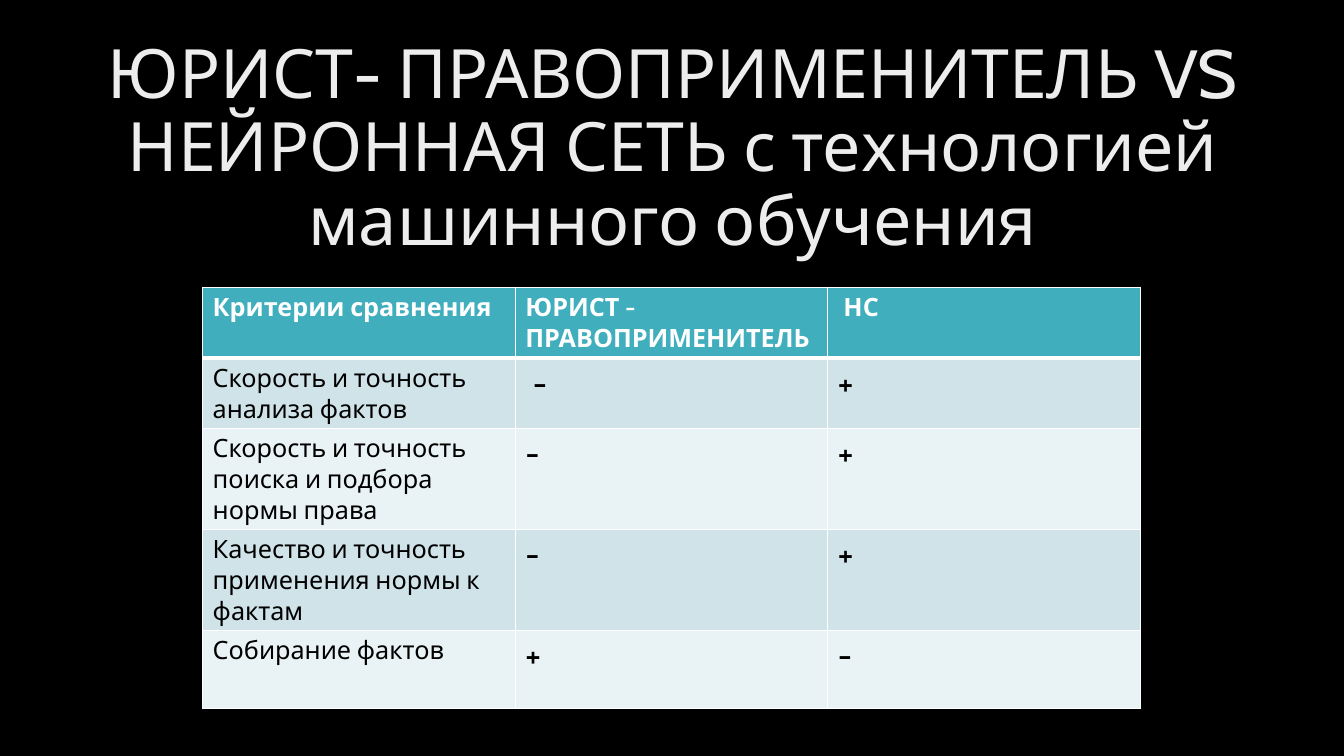
"""Build a slide that compares a lawyer with a neural network."""
from lxml.etree import SubElement
from pptx import Presentation
from pptx.dml.color import RGBColor
from pptx.enum.text import MSO_ANCHOR, PP_ALIGN
from pptx.oxml.ns import qn
from pptx.util import Inches, Pt

TITLE = "ЮРИСТ- ПРАВОПРИМЕНИТЕЛЬ VS НЕЙРОННАЯ СЕТЬ с технологией машинного обучения"
ROWS = [
    ("Критерии сравнения", "ЮРИСТ - ПРАВОПРИМЕНИТЕЛЬ", " НС"),
    ("Скорость и точность анализа фактов", " -", "+"),
    ("Скорость и точность поиска и подбора нормы права", "-", "+"),
    ("Качество и точность применения нормы к фактам", "-", "+"),
    ("Собирание фактов", "+", "-"),
]
TALL = (0.55, 0.55, 0.78, 0.78, 0.78)
WIDE = 3.1
HEAD, BANDS = "41AEBD", ("E9F2F4", "CFE3E8")


def paint(fill, color):
    fill.solid()
    fill.fore_color.rgb = RGBColor.from_string(color)


def write(frame, text, size=18, color="000000", bold=False, align=PP_ALIGN.LEFT, line=1.0):
    frame.word_wrap = True
    para = frame.paragraphs[0]
    para.alignment, para.line_spacing = align, line
    run = para.add_run()
    run.text = text
    font = run.font
    font.name, font.size, font.bold = "Cabin", Pt(size), bold
    font.color.rgb = RGBColor.from_string(color)


def edge(cell, base):
    props = cell._tc.get_or_add_tcPr()
    sides = (("L", 1), ("R", 1), ("T", 1), ("B", base))
    for spot, (side, width) in enumerate(sides):
        line = SubElement(props, qn(f"a:ln{side}"), w=str(Pt(width)))
        SubElement(SubElement(line, qn("a:solidFill")), qn("a:srgbClr"), val="FFFFFF")
        props.insert(spot, line)


def main():
    deck = Presentation()
    deck.slide_width, deck.slide_height = Inches(13.33), Inches(7.5)
    slide = deck.slides.add_slide(deck.slide_layouts[6])
    paint(slide.background.fill, "000000")

    title = slide.shapes.add_textbox(Inches(0.92), Inches(0.76), Inches(11.5), Inches(1.45))
    title.text_frame.vertical_anchor = MSO_ANCHOR.MIDDLE
    write(title.text_frame, TITLE, size=48.6, color="EDEDED", align=PP_ALIGN.CENTER, line=0.9)

    cols = len(ROWS[0])
    table = slide.shapes.add_table(len(ROWS), cols, Inches(2.01), Inches(2.85),
                                   Inches(WIDE * cols), Inches(sum(TALL))).table
    for col in table.columns:
        col.width = Inches(WIDE)
    for r, texts in enumerate(ROWS):
        table.rows[r].height = Inches(TALL[r])
        top = r == 0
        for c, text in enumerate(texts):
            cell = table.cell(r, c)
            paint(cell.fill, HEAD if top else BANDS[r % 2])
            edge(cell, 3 if top else 1)
            write(cell.text_frame, text, size=18 if top or c == 0 else 24,
                  color="FFFFFF" if top else "000000", bold=top)
    deck.save("out.pptx")


if __name__ == "__main__":
    main()
